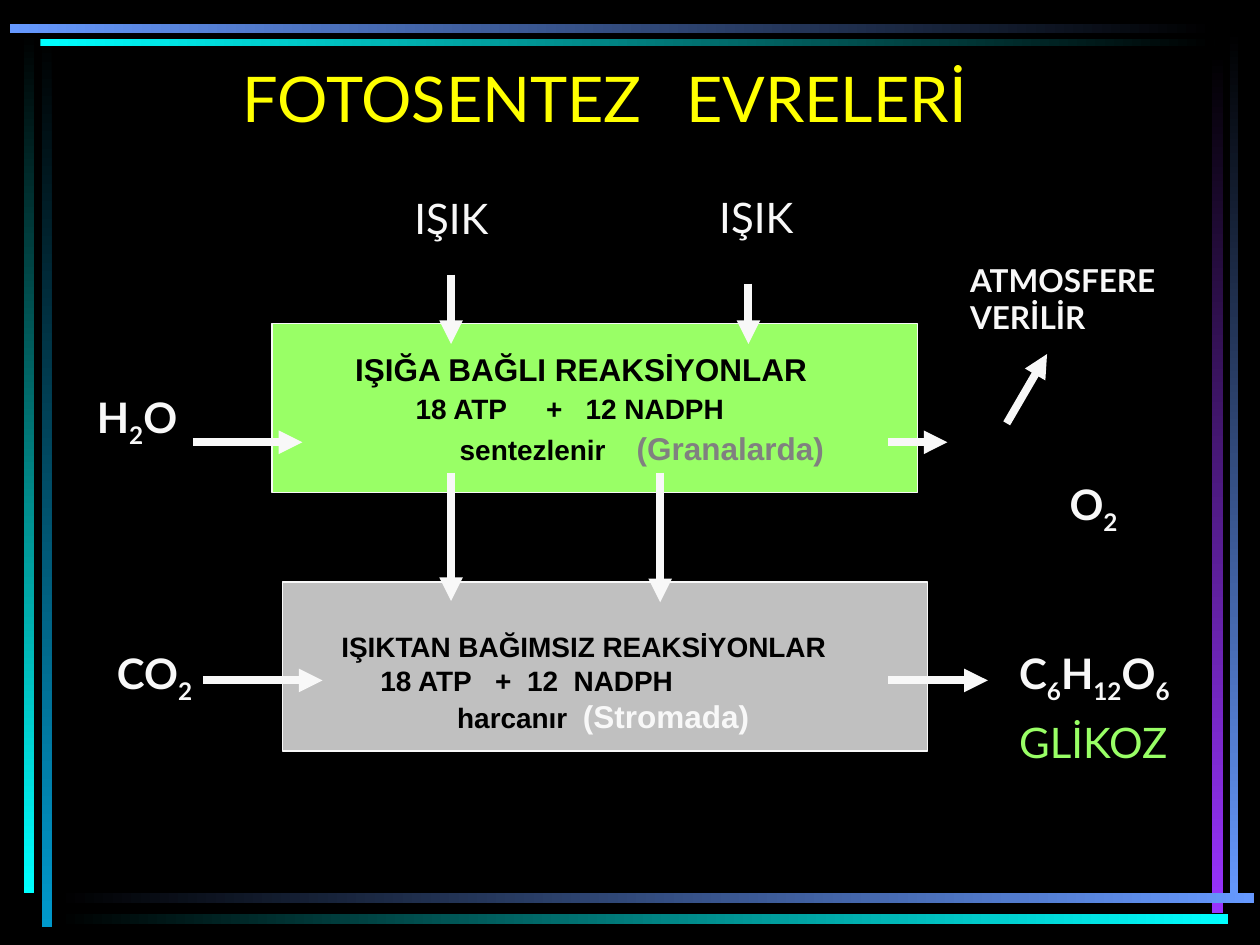
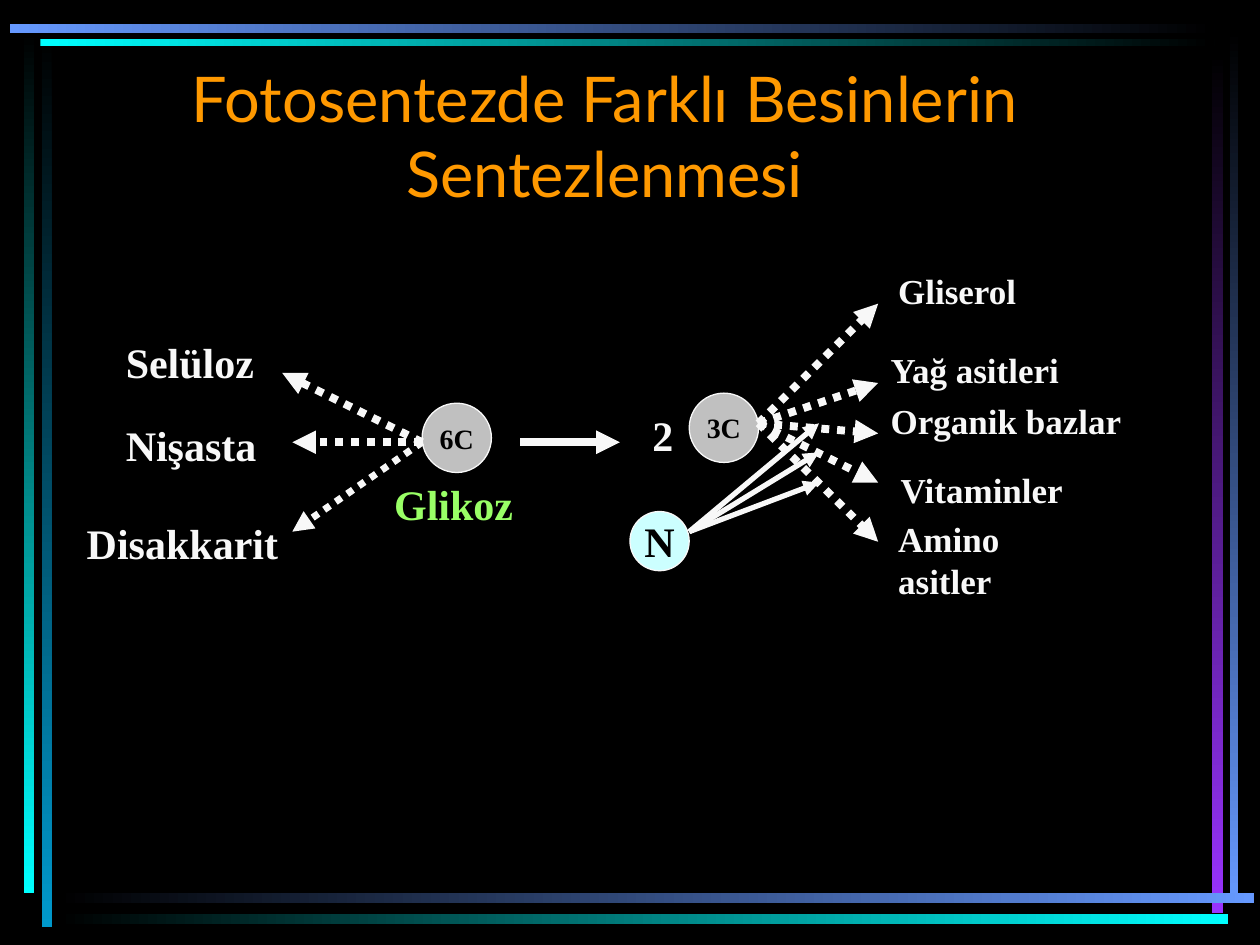
from dataclasses import dataclass
from itertools import groupby

from lxml import etree
from pptx import Presentation
from pptx import util as u
from pptx.dml.color import RGBColor
from pptx.enum import dml, shapes, text
from pptx.oxml.ns import qn

COLUMNS, ROWS = 100, 75


@dataclass(frozen=True)
class Theme:
    black: str = "000000"
    white: str = "F8F8F8"
    yellow: str = "FFFF00"
    orange: str = "FF9900"
    green: str = "99FF66"
    silver: str = "C0C0C0"
    gray: str = "808080"
    ice: str = "CCFFFF"
    cyan: str = "00FFFF"
    blue: str = "6699FF"
    teal: str = "0099CC"
    purple: str = "9933FF"
    sans: str = "Lato"
    box_font: str = "Arial"
    serif: str = "Times New Roman"
    title: int = 36
    label: int = 24
    product: int = 20
    heading: int = 18
    body: int = 16
    outline: float = 0.75
    arrow: float = 4.5
    thin_arrow: float = 3


THEME = Theme()


def rgb(value):
    return RGBColor.from_string(value)


def write(paragraph, words, *, size, font, color, bold=False, sub=False, spacing=0):
    """Add one run; spacing is the extra width after each letter, in points."""
    run = paragraph.add_run()
    run.text = words
    run.font.size, run.font.name = u.Pt(size), font
    run.font.bold, run.font.color.rgb = bold, rgb(color)
    properties = run.font._element
    if sub:
        properties.set("baseline", "-25000")
    if spacing:
        properties.set("spc", str(round(spacing * 100)))


def write_spaced(paragraph, parts, **style):
    """Write strings, with each number between them as one widened space."""
    for part in parts:
        if isinstance(part, str):
            write(paragraph, part, **style)
        else:
            write(paragraph, " ", spacing=part, **style)


class Deck:
    def __init__(self, theme):
        self.theme = theme
        self.file = Presentation()
        self.file.slide_width, self.file.slide_height = u.Inches(10), u.Inches(7.5)
        self.layout = self.file.slide_layouts.get_by_name("Title Only")
        self.slide = None

    def x(self, columns):
        return round(self.file.slide_width * columns / COLUMNS)

    def y(self, rows):
        return round(self.file.slide_height * rows / ROWS)

    def area(self, left, top, width, height):
        return self.x(left), self.y(top), self.x(width), self.y(height)

    def new_slide(self, parts, color, height):
        first = self.slide is None
        self.slide = self.file.slides.add_slide(self.layout)
        if first:
            self.frame()
        title = self.slide.shapes.title
        title.left, title.top, title.width, title.height = self.area(4.2, 4.2, 87.6, height)
        frame = title.text_frame
        frame.word_wrap, frame.vertical_anchor = True, text.MSO_ANCHOR.TOP
        frame.auto_size = text.MSO_AUTO_SIZE.NONE
        frame.paragraphs[0].alignment = text.PP_ALIGN.CENTER
        write_spaced(frame.paragraphs[0], parts, size=self.theme.title,
                     font=self.theme.sans, color=color)

    def frame(self):
        """Put the background and the glowing border on the shared layout."""
        t = self.theme
        background = self.layout.background.fill
        background.solid()
        background.fore_color.rgb = rgb(t.black)
        for holder in list(self.layout.placeholders):
            if holder.placeholder_format.idx:
                holder.element.getparent().remove(holder.element)
        bars = [
            self.bar(3.3, 2.8, 0.8, 70.8, t.black, t.teal),
            self.bar(1.9, 2.5, 0.8, 68.4, t.black, t.cyan),
            self.bar(97.6, 2.4, 0.7, 69.3, t.black, t.blue),
            self.bar(96.2, 4.2, 0.9, 68.3, t.black, t.purple),
            self.bar(4.5, 70.9, 95, 0.8, t.black, t.blue),
            self.bar(4.5, 72.5, 93, 0.8, t.black, t.cyan),
            self.bar(3.2, 3.1, 93.2, 0.6, t.cyan, t.black),
            self.bar(0.8, 1.9, 95.6, 0.7, t.blue, t.black),
        ]
        for bar in bars:
            self.layout.shapes.element.append(bar.element)

    def bar(self, left, top, width, height, start, end):
        bar = self.slide.shapes.add_shape(shapes.MSO_SHAPE.RECTANGLE,
                                          *self.area(left, top, width, height))
        bar.shadow.inherit = False
        bar.line.fill.background()
        bar.fill.gradient()
        bar.fill.gradient_angle = 270 if height > width else 0
        for stop, color in zip(bar.fill.gradient_stops, (start, end)):
            stop.color.rgb = rgb(color)
        return bar

    def shape(self, kind, area, fill):
        shape = self.slide.shapes.add_shape(kind, *self.area(*area))
        shape.shadow.inherit = False
        shape.fill.solid()
        shape.fill.fore_color.rgb = rgb(fill)
        shape.line.color.rgb = rgb(self.theme.white)
        shape.line.width = u.Pt(self.theme.outline)
        shape.text_frame.vertical_anchor = text.MSO_ANCHOR.MIDDLE
        return shape

    def reaction(self, left, top, fill, lines, inset_top=0.5, gap=0):
        """Draw a stage; each line is its indent in columns and its styled runs."""
        frame = self.shape(shapes.MSO_SHAPE.RECTANGLE, (left, top, 51.2, 13.4), fill).text_frame
        frame.word_wrap, frame.margin_top = True, self.y(inset_top)
        for number, (indent, runs) in enumerate(lines):
            paragraph = frame.add_paragraph() if number else frame.paragraphs[0]
            paragraph.alignment = text.PP_ALIGN.LEFT
            paragraph._p.get_or_add_pPr().set("marL", str(self.x(indent)))
            if number:
                paragraph.space_before = u.Pt(gap)
            for parts, size, color in runs:
                write_spaced(paragraph, parts, size=size, font=self.theme.box_font,
                             color=color, bold=True)

    def molecule(self, left, top, diameter, name, fill, size):
        area = (left, top, diameter, diameter)
        frame = self.shape(shapes.MSO_SHAPE.OVAL, area, fill).text_frame
        frame.word_wrap = False
        frame.paragraphs[0].alignment = text.PP_ALIGN.CENTER
        write(frame.paragraphs[0], name, size=size, font=self.theme.serif,
              color=self.theme.black, bold=True)

    def textbox(self, left, top, width, height=5):
        frame = self.slide.shapes.add_textbox(*self.area(left, top, width, height)).text_frame
        frame.word_wrap = True
        return frame.paragraphs[0]

    def label(self, left, top, width, words, **style):
        look = dict(size=self.theme.label, font=self.theme.sans, color=self.theme.white)
        write(self.textbox(left, top, width), words, **(look | style))

    def formula(self, left, top, width, symbols):
        """Write a chemical formula with its digits lowered."""
        paragraph = self.textbox(left, top, width)
        for digits, letters in groupby(symbols, str.isdigit):
            write(paragraph, "".join(letters), size=self.theme.label, font=self.theme.sans,
                  color=self.theme.white, bold=True, sub=digits)

    def arrow(self, start, end, width=None, dotted=False):
        arrow = self.slide.shapes.add_connector(
            shapes.MSO_CONNECTOR.STRAIGHT,
            self.x(start[0]), self.y(start[1]), self.x(end[0]), self.y(end[1]))
        arrow.line.color.rgb = rgb(self.theme.white)
        arrow.line.width = u.Pt(width or self.theme.arrow)
        if dotted:
            arrow.line.dash_style = dml.MSO_LINE.ROUND_DOT
        etree.SubElement(arrow.line._ln, qn("a:tailEnd"), type="triangle")
        etree.SubElement(arrow.element.spPr, qn("a:effectLst"))

    def fan(self, start, ends, **style):
        for end in ends:
            self.arrow(start, end, **style)


def stages_slide(deck):
    t = deck.theme
    deck.new_slide(["FOTOSENTEZ", 16, "EVRELERİ"], t.yellow, 9.2)
    deck.reaction(21.6, 25.7, t.green, [
        (5.6, [(["IŞIĞA BAĞLI REAKSİYONLAR"], t.heading, t.black)]),
        (10.4, [(["18 ATP", 17.8, "+", 8.9, "12 NADPH"], t.body, t.black)]),
        (13.9, [(["sentezlenir", 13.3], t.body, t.black),
                (["(Granalarda)"], t.heading, t.gray)]),
    ], gap=2)
    deck.reaction(22.4, 46.2, t.silver, [
        (3.7, [(["IŞIKTAN BAĞIMSIZ REAKSİYONLAR"], t.body, t.black)]),
        (6.8, [(["18 ATP", 8.9, "+", 4.45, "12", 4.45, "NADPH"], t.body, t.black)]),
        (12.9, [(["harcanır", 4.45], t.body, t.black),
                (["(Stromada)"], t.heading, t.white)]),
    ], inset_top=3)

    for column, top, bottom in [(35.8, 21.8, 27.3), (59.4, 22.5, 27.3),
                                (35.8, 37.5, 47.7), (52.4, 37.5, 47.8)]:
        deck.arrow((column, top), (column, bottom))
    for row, left, right in [(35.1, 15.3, 24), (35.1, 70.5, 75.2),
                             (54, 16.1, 25.6), (54, 70.5, 78.4)]:
        deck.arrow((left, row), (right, row))
    deck.arrow((79.9, 33.6), (83.1, 28.1))

    deck.label(31.9, 14.8, 10.5, "IŞIK")
    deck.label(56.1, 14.7, 10.5, "IŞIK")
    deck.label(76, 20.2, 18.1, "ATMOSFERE VERİLİR", size=t.heading, bold=True)
    deck.label(79.9, 56.4, 17.8, "GLİKOZ", color=t.green)
    for left, top, width, symbols in [(6.7, 30.6, 9.5, "H2O"), (83.9, 37.5, 7.9, "O2"),
                                      (8.3, 50.9, 9.5, "CO2"), (79.9, 50.9, 15.1, "C6H12O6")]:
        deck.formula(left, top, width, symbols)


def products_slide(deck):
    t = deck.theme
    serif = dict(font=t.serif, bold=True)
    deck.new_slide(["Fotosentezde Farklı Besinlerin Sentezlenmesi"], t.orange, 14.4)

    for left, top, carbohydrate in [(9, 26.2, "Selüloz"), (9, 32.8, "Nişasta"),
                                    (5.9, 40.6, "Disakkarit")]:
        deck.label(left, top, 22, carbohydrate, **serif)
    deck.molecule(33.5, 32, 5.5, "6C", t.silver, t.body)
    deck.molecule(54.7, 31.2, 5.5, "3C", t.silver, t.body)
    deck.molecule(50, 40.6, 4.7, "N", t.ice, t.label)

    deck.arrow((41.3, 35.1), (49.2, 35.1))
    glucose, triose, nitrogen = (33.5, 35.1), (60.2, 33.6), (54.7, 42.2)
    deck.fan(glucose, [(22.4, 29.6), (23.2, 35.1)], dotted=True)
    deck.fan(glucose, [(23.2, 42.2)], dotted=True, width=4)
    deck.fan(triose, [(69.7, row) for row in (24.1, 30.4, 34.4, 38.3, 43)], dotted=True)
    deck.fan(nitrogen, [(65, row) for row in (33.6, 35.9, 38.3)], width=t.thin_arrow)

    deck.label(50.8, 32, 4.5, "2", **serif)
    deck.label(30.3, 37.5, 13.4, "Glikoz", color=t.green, **serif)
    for left, top, width, product in [
        (70.3, 20.9, 14, "Gliserol"), (69.7, 27.2, 17, "Yağ asitleri"),
        (69.7, 31.2, 21, "Organik bazlar"), (70.5, 36.7, 19.7, "Vitaminler"),
        (70.3, 40.6, 12, "Amino asitler"),
    ]:
        deck.label(left, top, width, product, size=t.product, **serif)


def main():
    deck = Deck(THEME)
    stages_slide(deck)
    products_slide(deck)
    deck.file.save("out.pptx")


if __name__ == "__main__":
    main()
